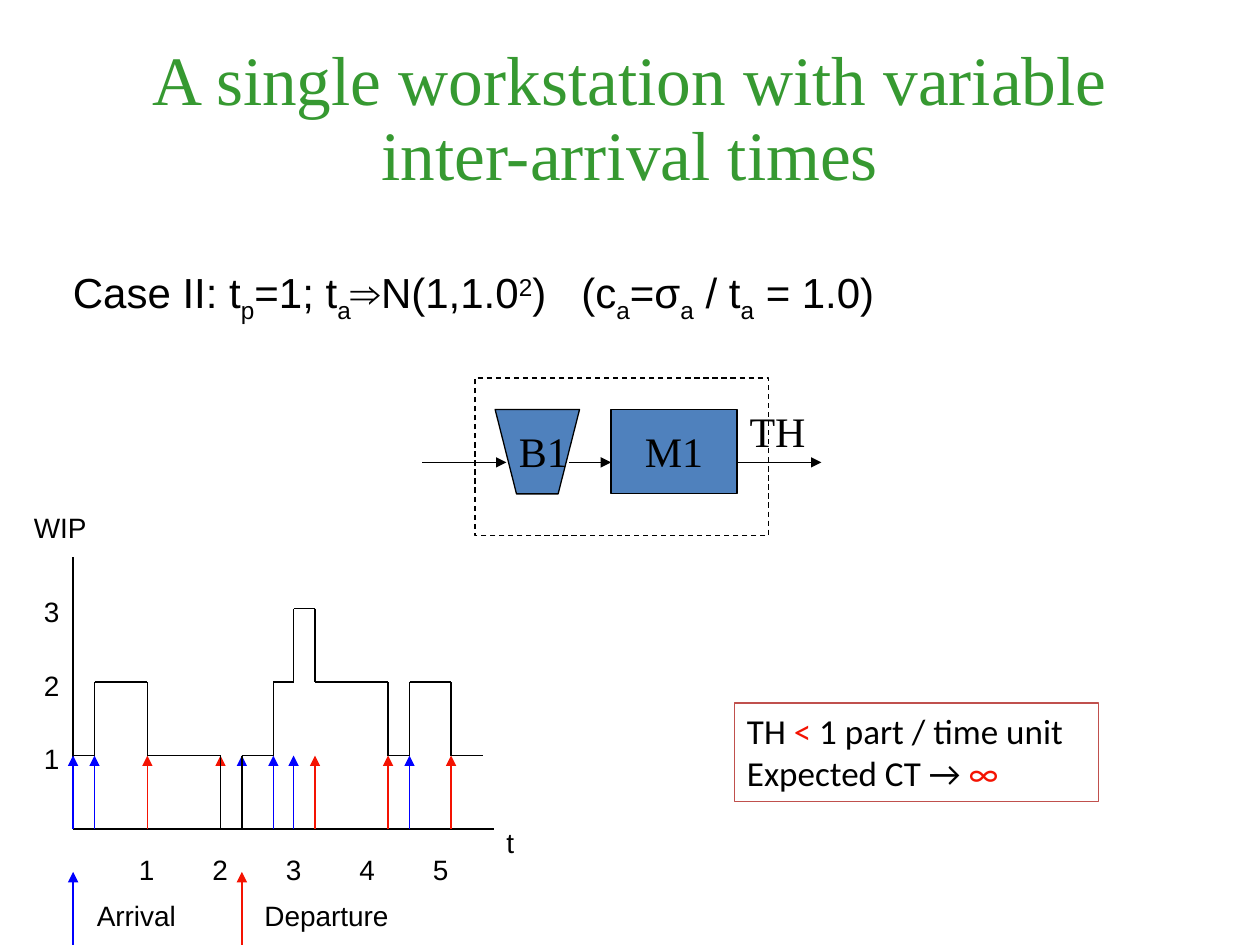
from typing import NamedTuple

from lxml import etree
from pptx import Presentation
from pptx.dml.color import RGBColor
from pptx.enum.dml import MSO_LINE
from pptx.enum.shapes import MSO_CONNECTOR, MSO_SHAPE
from pptx.enum.text import MSO_ANCHOR, MSO_AUTO_SIZE, PP_ALIGN
from pptx.oxml.ns import qn
from pptx.util import Inches, Pt

STRAIGHT = MSO_CONNECTOR.STRAIGHT
RECTANGLE = MSO_SHAPE.RECTANGLE
DASH = MSO_LINE.DASH
MIDDLE = MSO_ANCHOR.MIDDLE
CENTER = PP_ALIGN.CENTER
GROW = MSO_AUTO_SIZE.SHAPE_TO_FIT_TEXT

BLACK = RGBColor(0x00, 0x00, 0x00)
GREEN = RGBColor(0x36, 0x99, 0x31)
BLUE = RGBColor(0x00, 0x00, 0xFF)
RED = RGBColor(0xF4, 0x13, 0x02)
STEEL = RGBColor(0x4F, 0x81, 0xBD)
BRICK = RGBColor(0xC0, 0x50, 0x4D)

SERIF, SANS, BODY = "Times New Roman", "Arial", "Calibri"
SUB, SUPER = -25, 30

AXIS_X, AXIS_Y = 0.58, 6.58
UNIT = 7 / 12
STEP_END = 3.83


class Span(NamedTuple):
    text: str
    color: RGBColor = BLACK
    baseline: int = 0


class Label(NamedTuple):
    text: str
    left: float
    top: float
    width: float


class Step(NamedTuple):
    """From x on, the work in process stays at level."""
    x: float
    level: int


FLOW_LABELS = [Label("TH", 5.85, 3.17, 0.65), Label("B1", 4.02, 3.33, 0.59),
               Label("M1", 5.02, 3.33, 0.66)]
FLOW_ARROWS = [(3.35, 4.02), (4.52, 4.85), (5.85, 6.52)]

CHART_LABELS = [Label("WIP", 0.17, 4, 0.62), Label("t", 3.92, 6.5, 0.26),
                Label("Arrival", 0.67, 7.08, 0.83), Label("Departure", 2, 7.08, 1.19)]
CHART_LABELS += [Label(str(n), 0.25, 6.42 - n * UNIT, 0.32) for n in (1, 2, 3)]
CHART_LABELS += [Label(str(n), 0.42 + n * UNIT, 6.72, 0.32) for n in range(1, 6)]

STEPS = [Step(AXIS_X, 1), Step(0.75, 2), Step(1.17, 1), Step(1.75, 0), Step(1.92, 1),
         Step(2.17, 2), Step(2.33, 3), Step(2.5, 2), Step(3.08, 1), Step(3.25, 2),
         Step(3.58, 1)]

CASE = [Span("Case II: t"), Span("p", baseline=SUB), Span("=1; t"), Span("a", baseline=SUB),
        Span("⇒N(1,1.0"), Span("2", baseline=SUPER), Span(")   (c"), Span("a", baseline=SUB),
        Span("=σ"), Span("a", baseline=SUB), Span(" / t"), Span("a", baseline=SUB),
        Span(" = 1.0)")]
RESULT = [[Span("TH "), Span("<", RED), Span(" 1 part / time unit")],
          [Span("Expected CT →"), Span(" ∞", RED)]]


def add_spans(para, spans: list[Span], font: str, size: float) -> None:
    for span in spans:
        run = para.add_run()
        run.text = span.text
        run.font.name = font
        run.font.size = Pt(size)
        run.font.color.rgb = span.color
        if span.baseline:
            run.font._element.set("baseline", str(span.baseline * 1000))


def add_text(page, left: float, top: float, width: float, height: float,
             lines: list[list[Span]], font: str, size: float):
    """Add an unwrapped text box with one paragraph for each line."""
    box = page.shapes.add_textbox(Inches(left), Inches(top), Inches(width), Inches(height))
    frame = box.text_frame
    frame.word_wrap = False
    frame.auto_size = GROW
    for index, spans in enumerate(lines):
        para = frame.add_paragraph() if index else frame.paragraphs[0]
        add_spans(para, spans, font, size)
    return box


def add_labels(page, labels: list[Label], height: float, font: str, size: float) -> None:
    for label in labels:
        add_text(page, label.left, label.top, label.width, height,
                 [[Span(label.text)]], font, size)


def add_line(page, x1: float, y1: float, x2: float, y2: float,
             color: RGBColor = BLACK, arrow: bool = False) -> None:
    connector = page.shapes.add_connector(
        STRAIGHT, Inches(x1), Inches(y1), Inches(x2), Inches(y2))
    connector.line.color.rgb = color
    connector.line.width = Pt(0.75)
    if arrow:
        etree.SubElement(connector.line._get_or_add_ln(), qn("a:tailEnd"), type="triangle")
    etree.SubElement(connector._element.spPr, qn("a:effectLst"))


def style_station(shape, filled: bool) -> None:
    shape.shadow.inherit = False
    if filled:
        shape.fill.solid()
        shape.fill.fore_color.rgb = STEEL
    else:
        shape.fill.background()
        shape.line.dash_style = DASH
    shape.line.color.rgb = BLACK
    shape.line.width = Pt(0.75)


def add_title(page) -> None:
    box = add_text(page, 0.75, 0.33, 8.5, 1.25,
                   [[Span("A single workstation with variable inter-arrival times", GREEN)]],
                   SERIF, 39.6)
    frame = box.text_frame
    frame.word_wrap = True
    frame.auto_size = MSO_AUTO_SIZE.NONE
    frame.vertical_anchor = MIDDLE
    frame.paragraphs[0].alignment = CENTER
    frame.paragraphs[0].line_spacing = 0.9


def add_workstation(page) -> None:
    machine = page.shapes.add_shape(
        RECTANGLE, Inches(4.85), Inches(3.25), Inches(1), Inches(0.67))
    style_station(machine, filled=True)
    builder = page.shapes.build_freeform(Inches(3.93), Inches(3.25))
    builder.add_line_segments([(Inches(x), Inches(y)) for x, y in
                               ((4.1, 3.92), (4.43, 3.92), (4.6, 3.25))], close=True)
    style_station(builder.convert_to_shape(), filled=True)
    border = page.shapes.add_shape(
        RECTANGLE, Inches(3.77), Inches(3), Inches(2.33), Inches(1.25))
    style_station(border, filled=False)
    for start, end in FLOW_ARROWS:
        add_line(page, start, 3.67, end, 3.67, arrow=True)
    add_labels(page, FLOW_LABELS, 0.5, SERIF, 24)


def level_y(level: int) -> float:
    return AXIS_Y - level * UNIT


def add_wip_chart(page) -> None:
    """Draw axes, arrival and departure arrows, and the stepped WIP line."""
    add_line(page, AXIS_X, AXIS_Y, 3.92, AXIS_Y)
    add_line(page, AXIS_X, AXIS_Y, AXIS_X, 4.42)
    levels_before = [0] + [step.level for step in STEPS]
    for before, step in zip(levels_before, STEPS):
        color = BLUE if step.level > before else RED
        add_line(page, step.x, AXIS_Y, step.x, level_y(1), color, arrow=True)
    for x, color in ((AXIS_X, BLUE), (1.92, RED)):
        add_line(page, x, 7.5, x, 6.92, color, arrow=True)
    add_labels(page, CHART_LABELS, 0.37, SANS, 16)

    ends = [step.x for step in STEPS[1:]] + [STEP_END]
    for index, (step, end) in enumerate(zip(STEPS, ends)):
        if index:
            add_line(page, step.x, level_y(STEPS[index - 1].level), step.x, level_y(step.level))
        if step.level:
            add_line(page, step.x, level_y(step.level), end, level_y(step.level))


def main() -> None:
    deck = Presentation()
    deck.slide_width, deck.slide_height = Inches(10), Inches(7.5)
    page = deck.slides.add_slide(deck.slide_layouts[6])
    add_title(page)
    add_workstation(page)
    add_text(page, 0.48, 2.07, 6.74, 0.5, [CASE], SANS, 24)
    result = add_text(page, 5.83, 5.58, 2.89, 0.78, RESULT, BODY, 20)
    result.line.color.rgb = BRICK
    result.line.width = Pt(0.75)
    add_wip_chart(page)
    deck.save("out.pptx")


if __name__ == "__main__":
    main()
